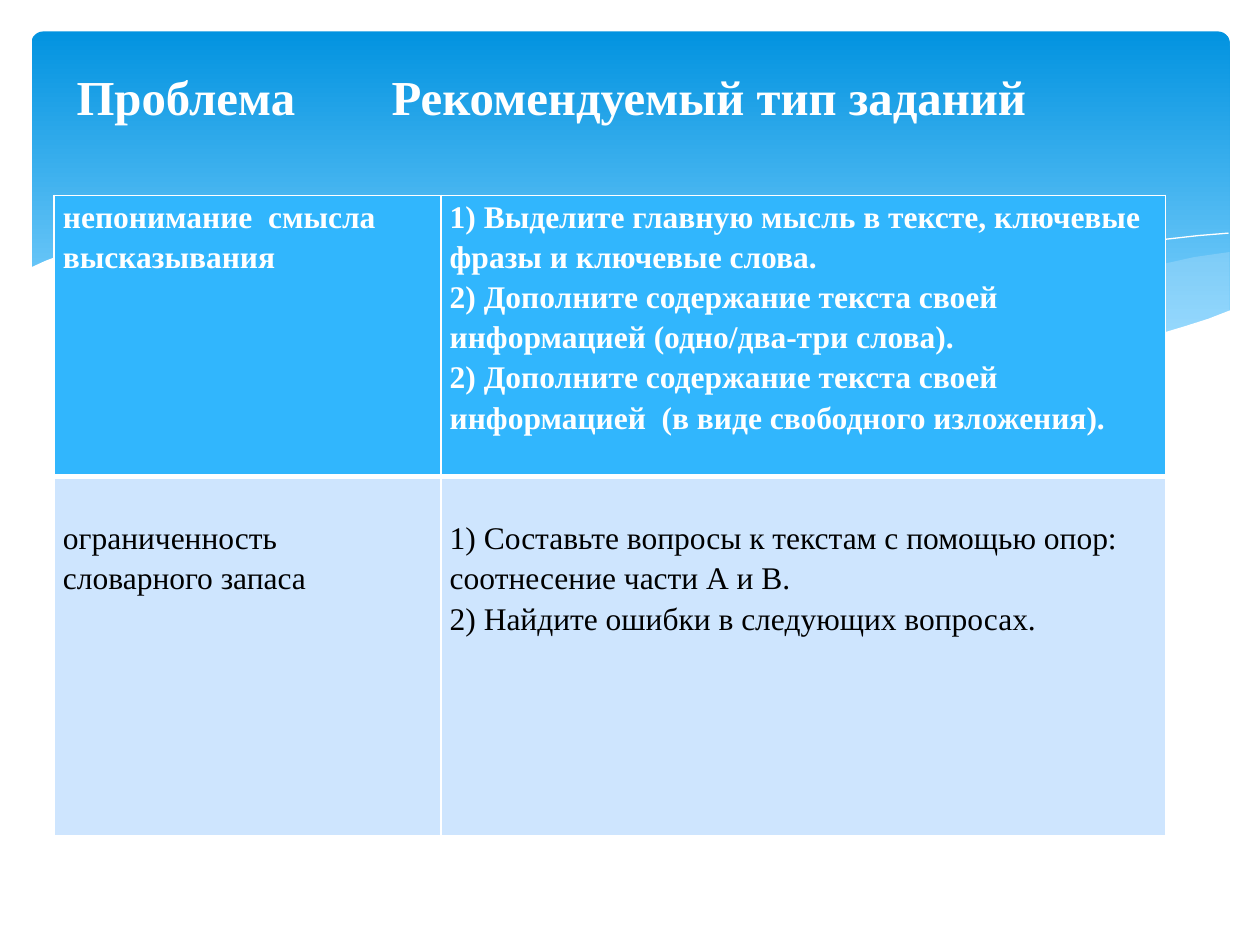
"""Build a slide with a two-column table of problems and recommended tasks."""
from dataclasses import dataclass
from typing import Optional

from lxml.etree import SubElement
from pptx import Presentation
from pptx.dml.color import RGBColor as RGB
from pptx.enum.shapes import MSO_SHAPE as SHAPE
from pptx.enum.text import MSO_ANCHOR as ANCHOR
from pptx.oxml.ns import qn
from pptx.util import Inches, Pt

FONT = "Times New Roman"
COLORS = {
    "white": "FFFFFF",
    "black": "000000",
    "banner_top": "0293E0",
    "banner_bottom": "83D3FE",
    "wave": "C6E7FC",
    "header": "31B6FD",
    "body": "CEE5FE",
}


@dataclass
class Wave:
    points: list[tuple[float, float]]
    fill: Optional[str] = None
    opacity: int = 100


@dataclass
class Row:
    cells: list[list[str]]
    height: float
    fill: str
    color: str
    bold: bool
    margin_top: float
    top_line: float
    bottom_line: float


WAVES = [
    Wave([(9.76, 2), (9.48, 2.04), (9.21, 2.1), (8.91, 2.16), (8.61, 2.23),
          (8.05, 2.37), (7.53, 2.48), (7.06, 2.57), (6.61, 2.65), (6.91, 2.69),
          (7.19, 2.72), (7.45, 2.75), (7.69, 2.77), (8.03, 2.78), (8.35, 2.77),
          (8.63, 2.75), (8.89, 2.72), (9.13, 2.67), (9.35, 2.62), (9.49, 2.57),
          (9.63, 2.52), (9.76, 2.47)], "wave", 29),
    Wave([(8.93, 2.73), (8.66, 2.69), (8.37, 2.65), (8.07, 2.6), (7.75, 2.54),
          (7.41, 2.47), (7.06, 2.4), (6.68, 2.31), (6.29, 2.22), (5.98, 2.14),
          (5.69, 2.08), (5.41, 2.03), (5.14, 1.98), (4.89, 1.94), (4.42, 1.89),
          (3.99, 1.86), (3.61, 1.85), (3.28, 1.87), (2.86, 1.91), (3.23, 1.96),
          (3.62, 2.03), (4.04, 2.11), (4.49, 2.22), (4.91, 2.32), (5.3, 2.4),
          (5.66, 2.48), (6.01, 2.55), (6.34, 2.61), (6.65, 2.66), (6.95, 2.7),
          (7.22, 2.74), (7.48, 2.76), (7.73, 2.77), (7.96, 2.78), (8.28, 2.78),
          (8.57, 2.77), (8.76, 2.75)], "wave", 40),
    Wave([(3.09, 1.95), (3.28, 1.92), (3.53, 1.89), (3.87, 1.87), (4.33, 1.87),
          (4.69, 1.89), (5.1, 1.92), (5.56, 1.97), (6.08, 2.04), (6.65, 2.13),
          (7.27, 2.26), (7.95, 2.41), (8.31, 2.51), (8.69, 2.61), (9.07, 2.72)]),
    Wave([(6.13, 2.57), (6.53, 2.46), (6.95, 2.35), (7.48, 2.23), (8.06, 2.1),
          (8.66, 1.99), (8.95, 1.94), (9.24, 1.9), (9.51, 1.87), (9.75, 1.85)]),
    Wave([(9.77, 2.46), (9.59, 2.53), (9.4, 2.59), (9.2, 2.65), (8.99, 2.69),
          (8.75, 2.73), (8.5, 2.75), (8.09, 2.77), (7.78, 2.76), (7.44, 2.74),
          (7.08, 2.7), (6.68, 2.65), (6.26, 2.58), (5.79, 2.5), (5.29, 2.39),
          (4.75, 2.27), (4.18, 2.13), (3.65, 2.02), (3.16, 1.94), (2.71, 1.88),
          (2.3, 1.85), (1.93, 1.84), (1.61, 1.84), (1.32, 1.86), (1.06, 1.89),
          (0.85, 1.93), (0.67, 1.97), (0.52, 2.01), (0.36, 2.07), (0.23, 2.13),
          (0.23, 3.29), (9.77, 3.29)], "white"),
]
COLUMNS = [3.07, 5.75]
ROWS = [
    Row([["непонимание  смысла высказывания"],
         ["1) Выделите главную мысль в тексте, ключевые фразы и ключевые слова.",
          "2) Дополните содержание текста своей информацией (одно/два-три слова).",
          "2) Дополните содержание текста своей информацией  (в виде свободного изложения)."]],
        2.23, "header", "white", True, 0, 1, 3),
    Row([["ограниченность словарного запаса"],
         ["1) Составьте вопросы к текстам с помощью опор: соотнесение части А и В.",
          "2) Найдите ошибки в следующих вопросах."]],
        2.85, "body", "black", False, 0.32, 3, 1),
]


def rgb(name: str) -> RGB:
    return RGB.from_string(COLORS[name])


def style(p, size: float, color: str, bold: bool) -> None:
    p.line_spacing = 1.15
    p.font.name = FONT
    p.font.size = Pt(size)
    p.font.bold = bold
    p.font.color.rgb = rgb(color)


def add_banner(s) -> None:
    sp = s.shapes.add_shape(SHAPE.ROUNDED_RECTANGLE, Inches(0.25), Inches(0.25),
                            Inches(9.51), Inches(2.7))
    sp.adjustments[0] = 0.034
    sp.shadow.inherit = False
    sp.line.fill.background()
    sp.fill.gradient()
    sp.fill.gradient_angle = 270
    stops = [("banner_top", 0), ("banner_bottom", 0.9)]
    for stop, (color, position) in zip(sp.fill.gradient_stops, stops):
        stop.color.rgb = rgb(color)
        stop.position = position


def add_wave(s, wave: Wave) -> None:
    points = [(Inches(x), Inches(y)) for x, y in wave.points]
    builder = s.shapes.build_freeform(*points[0])
    builder.add_line_segments(points[1:], close=wave.fill is not None)
    sp = builder.convert_to_shape()
    sp.shadow.inherit = False
    if wave.fill is None:
        sp.fill.background()
        sp.line.color.rgb = rgb("white")
        sp.line.width = Pt(0)
        return
    sp.line.fill.background()
    sp.fill.solid()
    sp.fill.fore_color.rgb = rgb(wave.fill)
    if wave.opacity < 100:
        color = sp.fill._xPr.find(qn("a:solidFill"))[0]
        SubElement(color, qn("a:alpha"), val=str(wave.opacity * 1000))


def add_borders(cell, top: float, bottom: float) -> None:
    tc_pr = cell._tc.get_or_add_tcPr()
    for side, width in (("L", 1), ("R", 1), ("T", top), ("B", bottom)):
        ln = SubElement(tc_pr, qn(f"a:ln{side}"), w=str(Pt(width)))
        fill = SubElement(ln, qn("a:solidFill"))
        SubElement(fill, qn("a:srgbClr"), val=COLORS["white"])


def fill_cell(cell, lines: list[str], row: Row) -> None:
    add_borders(cell, row.top_line, row.bottom_line)
    cell.fill.solid()
    cell.fill.fore_color.rgb = rgb(row.fill)
    cell.margin_left = cell.margin_right = Inches(0.07)
    cell.margin_top = Inches(row.margin_top)
    cell.margin_bottom = 0
    cell.text_frame.text = "\n".join(lines)
    for p in cell.text_frame.paragraphs:
        style(p, 18, row.color, row.bold)


def add_task_table(s) -> None:
    height = sum(row.height for row in ROWS)
    table = s.shapes.add_table(len(ROWS), len(COLUMNS), Inches(0.43), Inches(1.55),
                               Inches(sum(COLUMNS)), Inches(height)).table
    table.first_row = table.horz_banding = False
    for column, width in zip(table.columns, COLUMNS):
        column.width = Inches(width)
    for table_row, row in zip(table.rows, ROWS):
        table_row.height = Inches(row.height)
        for cell, lines in zip(table_row.cells, row.cells):
            fill_cell(cell, lines, row)


def add_title(s) -> None:
    tf = s.shapes.add_textbox(Inches(0.51), Inches(0.29), Inches(9), Inches(1.37)).text_frame
    tf.word_wrap = True
    tf.vertical_anchor = ANCHOR.TOP
    tf.margin_top = Inches(0.17)
    p = tf.paragraphs[0]
    p.text = "Проблема\t\tРекомендуемый тип заданий"
    style(p, 27.9, "white", True)


def main() -> None:
    prs = Presentation()
    prs.slide_width, prs.slide_height = Inches(10), Inches(7.5)
    s = prs.slides.add_slide(prs.slide_layouts[6])
    add_banner(s)
    for wave in WAVES:
        add_wave(s, wave)
    add_task_table(s)
    add_title(s)
    prs.save("out.pptx")


if __name__ == "__main__":
    main()
